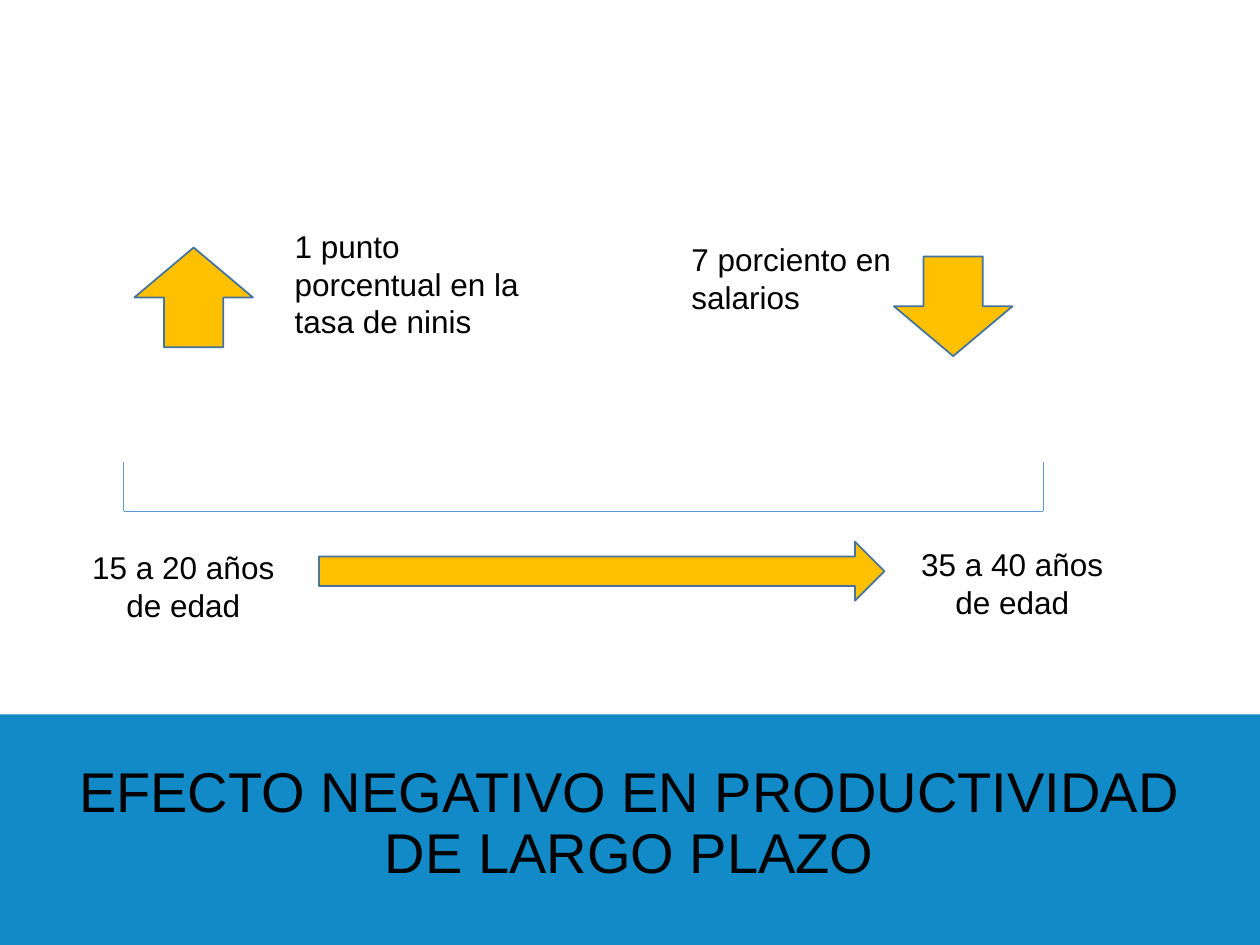
from lxml import etree
from pptx import Presentation
from pptx.dml.color import RGBColor
from pptx.enum.shapes import MSO_CONNECTOR, MSO_SHAPE
from pptx.enum.text import MSO_AUTO_SIZE, PP_ALIGN
from pptx.oxml.ns import qn
from pptx.util import Cm, Pt

STRAIGHT = MSO_CONNECTOR.STRAIGHT
RIGHT_ARROW = MSO_SHAPE.RIGHT_ARROW
RECTANGLE = MSO_SHAPE.RECTANGLE
FIT_SHAPE = MSO_AUTO_SIZE.SHAPE_TO_FIT_TEXT
LEFT = PP_ALIGN.LEFT
CENTER = PP_ALIGN.CENTER

BLACK = RGBColor(0x00, 0x00, 0x00)
AMBER = RGBColor(0xFF, 0xC0, 0x00)
ARROW_OUTLINE = RGBColor(0x43, 0x73, 0x9E)
BRACKET_BLUE = RGBColor(0x5B, 0x9B, 0xD5)
BAND_BLUE = RGBColor(0x11, 0x8A, 0xC7)


def write_text(shape, text, size, alignment):
    """Fill a text shape with one wrapped black Arial paragraph."""
    text_frame = shape.text_frame
    text_frame.text = text
    text_frame.word_wrap = True
    text_frame.auto_size = FIT_SHAPE
    paragraph = text_frame.paragraphs[0]
    paragraph.alignment = alignment
    font = paragraph.runs[0].font
    font.name = "Arial"
    font.size = Pt(size)
    font.color.rgb = BLACK
    return paragraph


presentation = Presentation()
presentation.slide_width = Cm(25.4)
presentation.slide_height = Cm(19.05)
slide = presentation.slides.add_slide(presentation.slide_layouts[5])
shapes = slide.shapes

# Bracket spanning the two ages
start_x, end_x = 2.49, 21.03
base_y, tip_y = 10.31, 9.32
for x1, y1, x2, y2 in [
    (start_x, base_y, end_x, base_y),
    (start_x, base_y, start_x, tip_y),
    (end_x, base_y, end_x, tip_y),
]:
    connector = shapes.add_connector(STRAIGHT, Cm(x1), Cm(y1), Cm(x2), Cm(y2))
    connector.line.color.rgb = BRACKET_BLUE
    connector.line.width = Pt(0.5)
    etree.SubElement(connector.element.spPr, qn("a:effectLst"))

# Arrows: time span, rise and fall
for left, top, width, height, rotation in [
    (6.43, 10.92, 11.4, 1.19, 0),
    (2.9, 4.8, 2.01, 2.39, 270),
    (18.21, 4.98, 2.01, 2.39, 90),
]:
    arrow = shapes.add_shape(RIGHT_ARROW, Cm(left), Cm(top), Cm(width), Cm(height))
    arrow.rotation = rotation
    arrow.shadow.inherit = False
    arrow.fill.solid()
    arrow.fill.fore_color.rgb = AMBER
    arrow.line.color.rgb = ARROW_OUTLINE
    arrow.line.width = Pt(1)

# Labels
for text, left, top, width, height, alignment in [
    ("15 a 20 años de edad", 1.5, 10.92, 4.39, 1.8, CENTER),
    ("35 a 40 años de edad", 18.21, 10.87, 4.39, 1.8, CENTER),
    ("1 punto porcentual en la tasa de ninis", 5.69, 4.45, 5.41, 2.57, LEFT),
    ("7 porciento en salarios", 13.69, 4.72, 5.41, 1.8, LEFT),
]:
    label = shapes.add_textbox(Cm(left), Cm(top), Cm(width), Cm(height))
    write_text(label, text, 18, alignment)

# Title on its band
band = shapes.add_shape(RECTANGLE, Cm(0), Cm(14.4), Cm(25.4), Cm(4.67))
band.shadow.inherit = False
band.fill.solid()
band.fill.fore_color.rgb = BAND_BLUE
band.line.fill.background()

title = shapes.title
title.left, title.top, title.width, title.height = Cm(0.94), Cm(15.27), Cm(23.5), Cm(2.72)
paragraph = write_text(title, "EFECTO NEGATIVO EN PRODUCTIVIDAD DE LARGO PLAZO", 32, CENTER)
paragraph.line_spacing = 0.9
band.element.addnext(title.element)  # bring the title in front of the band

presentation.save("out.pptx")
